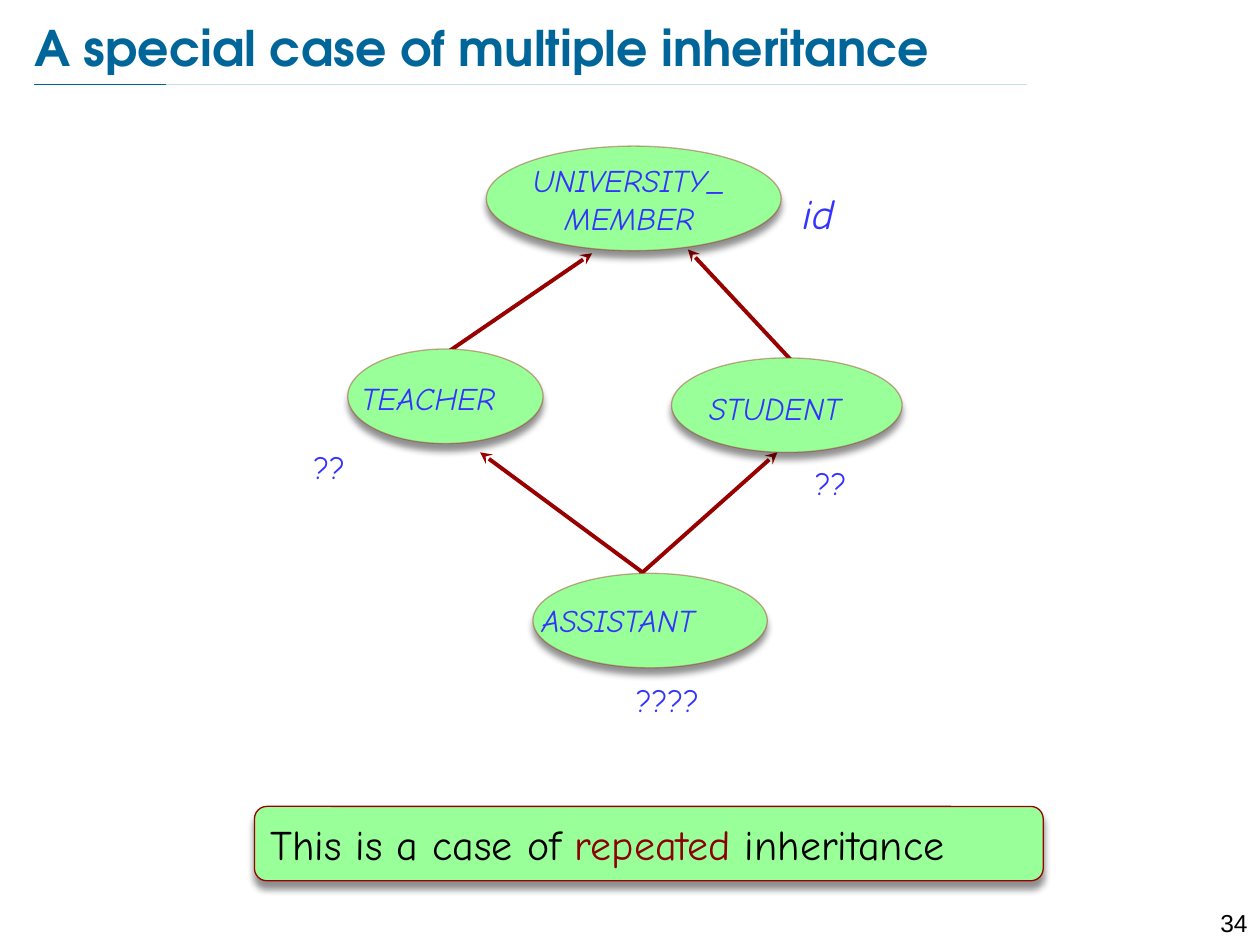
"""Build a slide that shows repeated inheritance as a diamond of classes."""
from lxml.etree import SubElement
from pptx import Presentation
from pptx.dml.color import RGBColor
from pptx.enum.shapes import MSO_CONNECTOR, MSO_SHAPE
from pptx.enum.text import MSO_ANCHOR, PP_ALIGN
from pptx.oxml.ns import qn
from pptx.util import Inches, Pt

TEAL = RGBColor(0x00, 0x66, 0x99)
PALE_TEAL = RGBColor(0xC8, 0xDD, 0xE6)
CRIMSON = RGBColor(0x99, 0x00, 0x00)
DARK_RED = RGBColor(0x8B, 0x00, 0x00)
GREEN = RGBColor(0x99, 0xFF, 0x99)
BLUE = RGBColor(0x33, 0x33, 0xFF)
BLACK = RGBColor(0x00, 0x00, 0x00)
COLUMNS, ROWS = 100, 75


class SlideBuilder:
    """Hold the style and the current slide, measured on a grid of columns and rows."""

    title_font = "TeX Gyre Adventor"
    body_font = "Comic Neue"
    number_font = "Arial"

    def __init__(self, deck):
        self.column = deck.slide_width / COLUMNS
        self.row = deck.slide_height / ROWS
        self.page = deck.slides.add_slide(deck.slide_layouts[5])

    def place(self, *lengths):
        units = (self.column, self.row) * 2
        return [round(length * unit) for length, unit in zip(lengths, units)]

    def style(self, para, size, color, font=None, bold=False, italic=False):
        para.font.size = Pt(size)
        para.font.name = font or self.body_font
        para.font.color.rgb = color
        para.font.bold = bold
        para.font.italic = italic

    def title(self, words, area):
        title = self.page.shapes.title
        title.left, title.top, title.width, title.height = self.place(*area)
        frame = title.text_frame
        frame.margin_left = frame.margin_right = 0
        frame.margin_top = frame.margin_bottom = 0
        frame.vertical_anchor = MSO_ANCHOR.MIDDLE
        frame.text = words
        para = frame.paragraphs[0]
        para.alignment = PP_ALIGN.LEFT
        self.style(para, 28, TEAL, self.title_font, bold=True)

    def line(self, ends, color, width, arrow=False):
        line = self.page.shapes.add_connector(MSO_CONNECTOR.STRAIGHT, *self.place(*ends))
        line.line.color.rgb = color
        line.line.width = Pt(width)
        if arrow:
            SubElement(line.line._get_or_add_ln(), qn("a:tailEnd"), type="stealth")
        SubElement(line._element.spPr, qn("a:effectLst"))

    def label(self, words, area, size=18, color=BLUE, font=None, italic=False,
              align=PP_ALIGN.LEFT):
        box = self.page.shapes.add_textbox(*self.place(*area))
        box.text_frame.word_wrap = True
        box.text_frame.text = words
        para = box.text_frame.paragraphs[0]
        para.alignment = align
        self.style(para, size, color, font, italic=italic)

    def panel(self, kind, area, line_opacity=100):
        panel = self.page.shapes.add_shape(kind, *self.place(*area))
        panel.fill.solid()
        panel.fill.fore_color.rgb = GREEN
        panel.line.color.rgb = CRIMSON
        panel.line.width = Pt(0.75)
        if line_opacity < 100:
            line_color = panel.line._get_or_add_ln().find(".//" + qn("a:srgbClr"))
            SubElement(line_color, qn("a:alpha"), val=str(line_opacity * 1000))
        panel.shadow.inherit = False
        effects = panel._element.spPr.find(qn("a:effectLst"))
        shadow = SubElement(effects, qn("a:outerShdw"), blurRad=str(Pt(4)), dist=str(Pt(4)),
                            dir="5400000", algn="ctr", rotWithShape="0")
        tint = SubElement(shadow, qn("a:srgbClr"), val=str(BLACK))
        SubElement(tint, qn("a:alpha"), val="43000")
        return panel

    def message(self, spans, area):
        frame = self.panel(MSO_SHAPE.ROUNDED_RECTANGLE, area).text_frame
        frame.word_wrap = True
        frame.vertical_anchor = MSO_ANCHOR.MIDDLE
        para = frame.paragraphs[0]
        para.alignment = PP_ALIGN.LEFT
        indent = Inches(0.38)
        para._p.get_or_add_pPr().set("marL", str(indent))
        para._p.get_or_add_pPr().set("indent", str(-indent))
        self.style(para, 24, BLACK)
        for words, color in spans:
            span = para.add_run()
            span.text = words
            span.font.color.rgb = color


def main():
    deck = Presentation()
    deck.slide_width, deck.slide_height = Inches(10), Inches(7.5)
    slide = SlideBuilder(deck)

    slide.title("A special case of multiple inheritance", (2.7, 1.3, 90.4, 4.8))
    for right, color in ((81.5, PALE_TEAL), (13.2, TEAL)):
        slide.line((2.7, 6.7, right, 6.7), color, 0.25)
    slide.label("34", (94.5, 71.6, 5.5, 2.4), 14, BLACK, slide.number_font,
                align=PP_ALIGN.RIGHT)

    for ends in ((35.6, 27.9, 47, 20.1), (62.9, 28.7, 54.6, 19.8),
                 (50.8, 45.6, 61.7, 35.9), (51.1, 45.5, 38.1, 35.9)):
        slide.line(ends, CRIMSON, 2.25, arrow=True)

    classes = (
        ("TEACHER", (27.6, 27.7, 15.5, 7.5), (27.7, 29.6, 14.2, 4), PP_ALIGN.LEFT),
        ("STUDENT", (53.3, 28.4, 18.3, 7.5), (55.3, 30.4, 17, 4), PP_ALIGN.LEFT),
        ("UNIVERSITY_MEMBER", (38.6, 11.6, 23.4, 8.3), (40.5, 12.3, 18.9, 7),
         PP_ALIGN.CENTER),
        ("ASSISTANT", (42.3, 45.5, 18.6, 7.5), (42, 47.2, 18.4, 4), PP_ALIGN.LEFT),
    )
    for name, oval, area, align in classes:
        slide.panel(MSO_SHAPE.OVAL, oval, line_opacity=34)
        slide.label(name, area, italic=True, align=align)

    slide.label("id", (62.7, 14.4, 7.1, 5), 24, italic=True)
    for marks, area in (("??", (63.7, 36.3, 7.1, 4)), ("??", (23.9, 35.1, 7.1, 4)),
                        ("????", (49.5, 53.6, 10.2, 4))):
        slide.label(marks, area)

    slide.message((("This is a case of ", BLACK), ("repeated", DARK_RED),
                   (" inheritance", BLACK)), (20.2, 64, 62.6, 5.9))
    deck.save("out.pptx")


if __name__ == "__main__":
    main()
